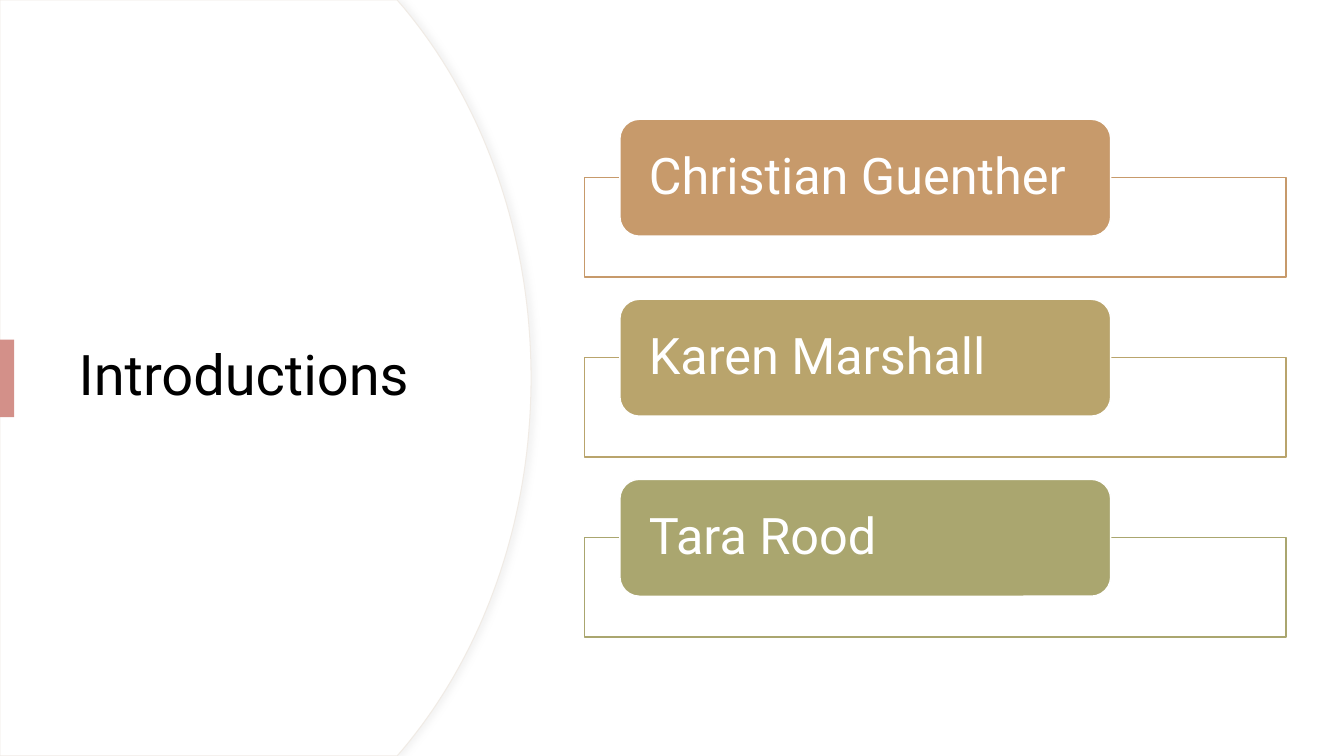
from lxml import etree
from pptx import Presentation
from pptx.dml.color import RGBColor
from pptx.enum.shapes import MSO_SHAPE
from pptx.enum.text import MSO_ANCHOR, MSO_AUTO_SIZE, PP_ALIGN
from pptx.oxml import parse_xml
from pptx.util import Pt

RECTANGLE = MSO_SHAPE.RECTANGLE
ROUNDED = MSO_SHAPE.ROUNDED_RECTANGLE
MIDDLE = MSO_ANCHOR.MIDDLE
NO_AUTOFIT = MSO_AUTO_SIZE.NONE
LEFT = PP_ALIGN.LEFT

WHITE = RGBColor(0xFF, 0xFF, 0xFF)
BLACK = RGBColor(0x00, 0x00, 0x00)
CREAM = RGBColor(0xF0, 0xEB, 0xE5)
ROSE = RGBColor(0xD3, 0x90, 0x89)
TAN = RGBColor(0xC7, 0x9A, 0x6B)
GOLD = RGBColor(0xB9, 0xA4, 0x6C)
OLIVE = RGBColor(0xAA, 0xA6, 0x6F)

FONT = "Roboto"
PAGE_WIDTH, PAGE_HEIGHT = 960, 540
PEOPLE = [("Christian Guenther", TAN), ("Karen Marshall", GOLD), ("Tara Rood", OLIVE)]
FIRST_TOP, ROW_STEP = 85.2, 128.6
CURVE = [(288.7, 5.8), (344.9, 73.4), (379.4, 167), (379.4, 270)]
CURVE_STEPS = 40
SHADOW = (
    '<a:outerShdw xmlns:a="http://schemas.openxmlformats.org/drawingml/2006/main"'
    ' blurRad="50800" dist="38100" dir="0" algn="l" rotWithShape="0">'
    '<a:srgbClr val="D9D9D9"><a:alpha val="30000"/></a:srgbClr></a:outerShdw>'
)


def paint(shape, fill, line=None, width=1):
    shape.shadow.inherit = False
    shape.fill.solid()
    shape.fill.fore_color.rgb = fill
    if line is None:
        shape.line.fill.background()
    else:
        shape.line.color.rgb = line
        shape.line.width = Pt(width)


def add_box(page, kind, left, top, width, height, fill, line=None):
    box = page.shapes.add_shape(kind, Pt(left), Pt(top), Pt(width), Pt(height))
    paint(box, fill, line)
    return box


def write(shape, text, size, color):
    frame = shape.text_frame
    frame.text = text
    frame.word_wrap = True
    frame.auto_size = NO_AUTOFIT
    frame.vertical_anchor = MIDDLE
    para = frame.paragraphs[0]
    para.alignment = LEFT
    para.line_spacing = 0.9
    para.font.name = FONT
    para.font.size = Pt(size)
    para.font.color.rgb = color


def curve_point(t):
    weights = ((1 - t) ** 3, 3 * t * (1 - t) ** 2, 3 * t**2 * (1 - t), t**3)
    return tuple(sum(w * point[axis] for w, point in zip(weights, CURVE)) for axis in (0, 1))


def add_curved_panel(page):
    upper = [(283.7, 0)] + [curve_point(step / CURVE_STEPS) for step in range(CURVE_STEPS + 1)]
    lower = [(x, PAGE_HEIGHT - y) for x, y in reversed(upper[:-1])]
    outline = upper + lower + [(0, PAGE_HEIGHT)]
    builder = page.shapes.build_freeform(0, 0)
    builder.add_line_segments([(Pt(x), Pt(y)) for x, y in outline], close=True)
    panel = builder.convert_to_shape()
    paint(panel, WHITE, CREAM, 0.75)
    effects = panel._element.spPr.find("{*}effectLst")
    effects.append(parse_xml(etree.tostring(etree.fromstring(SHADOW))))


def add_title(page, text):
    title = page.shapes.title
    title.left, title.top, title.width, title.height = Pt(49), Pt(91.4), Pt(283.7), Pt(356.4)
    write(title, text, 40, BLACK)
    page.shapes._spTree.append(title._element)


def add_person(page, top, name, color):
    add_box(page, RECTANGLE, 417.6, top + 41.4, 501.1, 71.3, WHITE, color)
    label = add_box(page, ROUNDED, 442.8, top, 350.6, 83.5, color, WHITE)
    write(label, name, 36, WHITE)
    frame = label.text_frame
    frame.margin_left = frame.margin_right = Pt(16.6)
    frame.margin_top = frame.margin_bottom = Pt(0)


def main():
    deck = Presentation()
    deck.slide_width, deck.slide_height = Pt(PAGE_WIDTH), Pt(PAGE_HEIGHT)
    page = deck.slides.add_slide(deck.slide_layouts[5])
    page.background.fill.solid()
    page.background.fill.fore_color.rgb = WHITE
    add_curved_panel(page)
    add_title(page, "Introductions")
    add_box(page, RECTANGLE, 0, 242.6, 10.1, 55.4, ROSE)
    for row, (name, color) in enumerate(PEOPLE):
        add_person(page, FIRST_TOP + row * ROW_STEP, name, color)
    deck.save("out.pptx")


if __name__ == "__main__":
    main()
